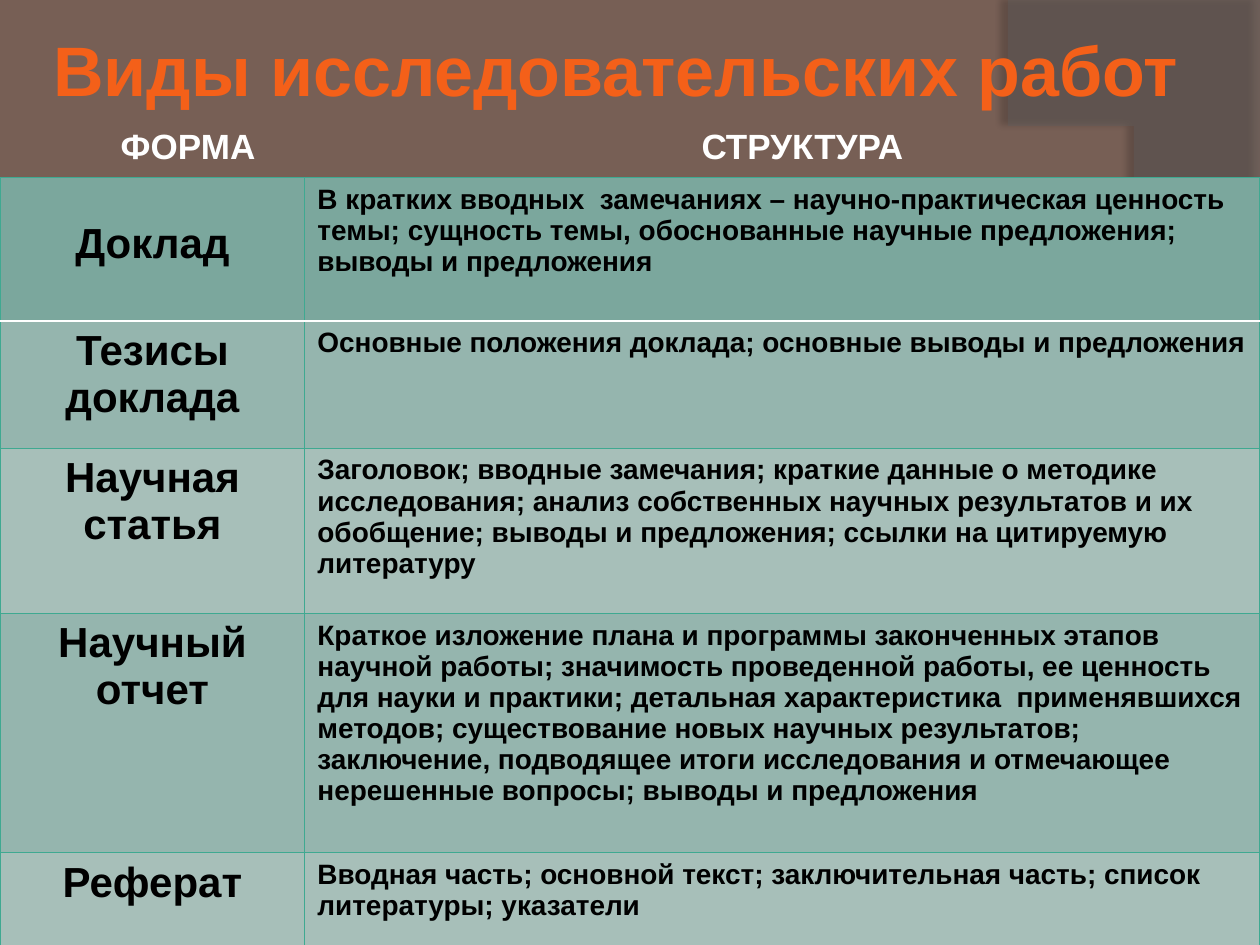
from lxml.etree import SubElement
from pptx import Presentation
from pptx.dml.color import RGBColor
from pptx.enum.text import MSO_ANCHOR as Anchor, PP_ALIGN as Align
from pptx.oxml import parse_xml
from pptx.oxml.ns import nsdecls, qn
from pptx.util import Inches, Pt

# Content
TITLE = "Виды исследовательских работ"
HEADS = [("ФОРМА", 0.86, 1.95), ("СТРУКТУРА", 5.47, 2.34)]  # text, left, width
ROWS = [  # form, structure, row height
    ("Доклад", "В кратких вводных  замечаниях – научно-практическая ценность темы; "
     "сущность темы, обоснованные научные предложения; выводы и предложения", 1.14),
    ("Тезисы доклада", "Основные положения доклада; основные выводы и предложения", 1.01),
    ("Научная статья", "Заголовок; вводные замечания; краткие данные о методике "
     "исследования; анализ собственных научных результатов и их обобщение; "
     "выводы и предложения; ссылки на цитируемую литературу", 1.31),
    ("Научный отчет", "Краткое изложение плана и программы законченных этапов научной "
     "работы; значимость проведенной работы, ее ценность для науки и практики; "
     "детальная характеристика  применявшихся методов; существование новых научных "
     "результатов; заключение, подводящее итоги исследования и отмечающее "
     "нерешенные вопросы; выводы и предложения", 1.9),
    ("Реферат", "Вводная часть; основной текст; заключительная часть; "
     "список литературы; указатели", 0.74),
]
COLS = [2.42, 7.58]
TOP = 1.41

THEME = {
    "font": "Arial", "back": "775F55", "curve": "5E5E5E", "title": "F46019",
    "head": "FFFFFF", "ink": "000000", "line": "3FA991",
    "first": "7BA79D", "bands": ["A7BFB9", "95B5AE"],
    "title_pt": 40, "head_pt": 20, "form_pt": 24, "text_pt": 16,
}


def rgb(name):
    return RGBColor.from_string(THEME.get(name, name))


def write(frame, text, size, color, align=Align.LEFT):
    frame.text = text
    frame.word_wrap = True
    para = frame.paragraphs[0]
    para.alignment = align
    font = para.font
    font.name, font.size, font.bold = THEME["font"], Pt(THEME[size]), True
    font.color.rgb = rgb(color)


def border(cell, side, color, width):
    line = SubElement(cell._tc.get_or_add_tcPr(), qn(f"a:ln{side}"), w=str(Pt(width)))
    fill = SubElement(line, qn("a:solidFill"))
    SubElement(fill, qn("a:srgbClr"), val=str(rgb(color)))


def bezier(a, b, c, d, steps=40):
    for i in range(1, steps + 1):
        t = i / steps
        u = 1 - t
        yield tuple(u**3 * p + 3 * u * u * t * q + 3 * u * t * t * r + t**3 * s
                    for p, q, r, s in zip(a, b, c, d))


deck = Presentation()
deck.slide_width, deck.slide_height = Inches(10), Inches(7.5)
slide = deck.slides.add_slide(deck.slide_layouts[5])
shapes = slide.shapes
slide.background.fill.solid()
slide.background.fill.fore_color.rgb = rgb("back")

# Translucent curve on the right, behind everything
foot = (8.21, 7.5)
pen = shapes.build_freeform(10, 0, scale=Inches(1))
pen.add_line_segments([(10, 7.5), foot, *bezier(foot, (9.35, 6.19), (10.18, 3), (8, 0))])
curve = pen.convert_to_shape()
curve.line.fill.background()
curve.fill.solid()
curve.fill.fore_color.rgb = rgb("curve")
tint = curve._element.spPr.find(qn("a:solidFill"))[0]
SubElement(tint, qn("a:alpha"), val="40000")
curve._element.spPr.append(parse_xml(
    f'<a:effectLst {nsdecls("a")}><a:outerShdw blurRad="{Pt(4)}" dist="{Pt(4)}" '
    'dir="10800000" algn="ctr" rotWithShape="0"><a:srgbClr val="000000">'
    '<a:alpha val="45000"/></a:srgbClr></a:outerShdw></a:effectLst>'))
shapes._spTree.insert(2, curve._element)

# Title and column heads
title = shapes.title
title.left, title.top, title.width, title.height = map(Inches, (0, 0.16, 9.77, 0.77))
write(title.text_frame, TITLE, "title_pt", "title", Align.CENTER)
title.text_frame.vertical_anchor = Anchor.TOP
for text, left, width in HEADS:
    box = shapes.add_textbox(Inches(left), Inches(0.94), Inches(width), Inches(0.44))
    write(box.text_frame, text, "head_pt", "head")

# Table
high = sum(row[2] for row in ROWS)
table = shapes.add_table(len(ROWS), len(COLS), 0, Inches(TOP),
                         Inches(sum(COLS)), Inches(high)).table
table.first_row = table.horz_banding = False
for col, width in zip(table.columns, COLS):
    col.width = Inches(width)
for i, (form, text, height) in enumerate(ROWS):
    table.rows[i].height = Inches(height)
    left, right = table.cell(i, 0), table.cell(i, 1)
    write(left.text_frame, form, "form_pt", "ink", Align.CENTER)
    write(right.text_frame, text, "text_pt", "ink")
    for cell in (left, right):
        for side in "LRTB":
            rule = (i, side) in [(0, "B"), (1, "T")]  # white rule under the first row
            border(cell, side, *(("head", 1.5) if rule else ("line", 0.75)))
        cell.fill.solid()
        cell.fill.fore_color.rgb = rgb(THEME["bands"][i % 2] if i else "first")
table.cell(0, 0).margin_top = Inches(0.34)

deck.save("out.pptx")
